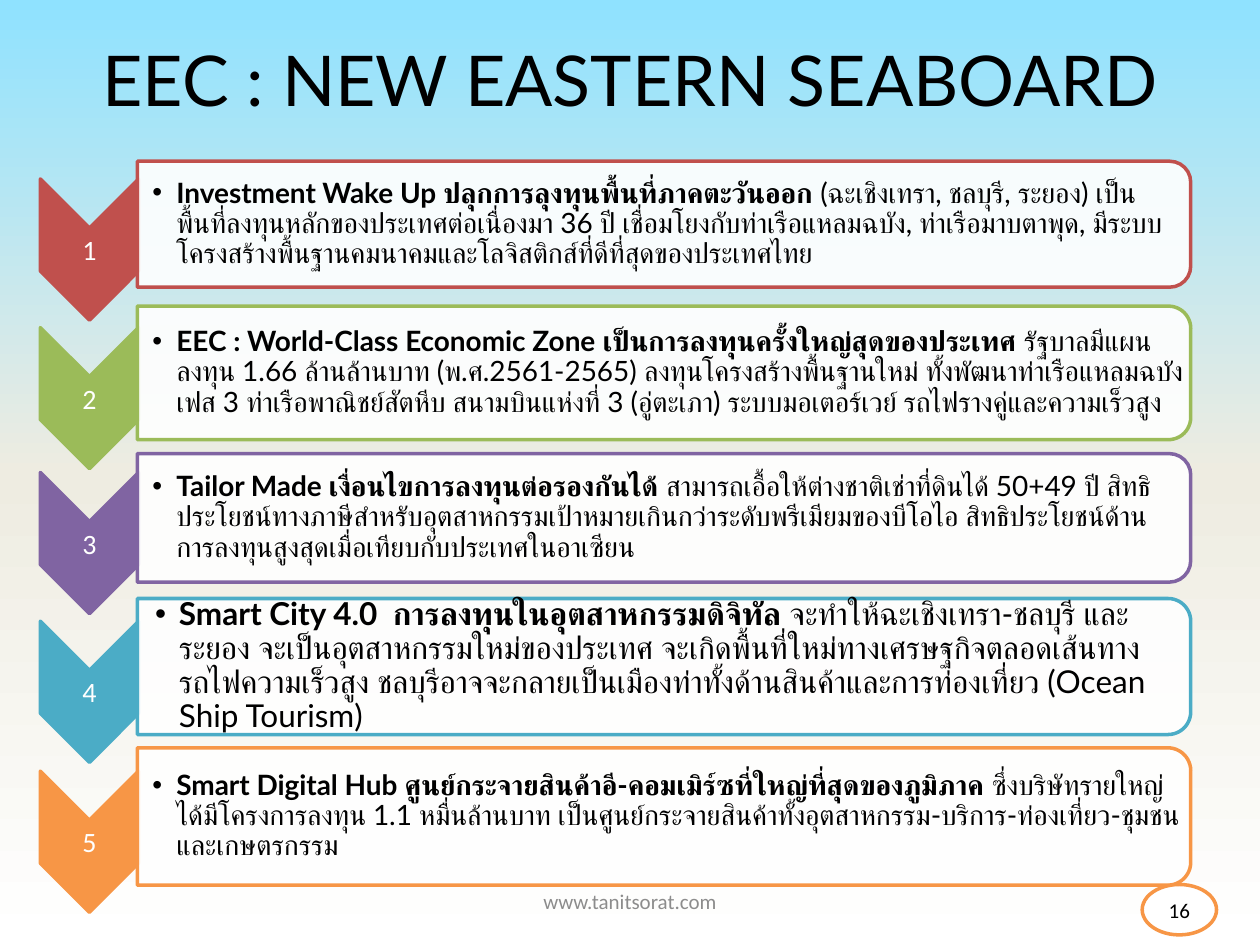
import pptx
import pptx.util
import pptx.dml.color
import pptx.enum.shapes
import pptx.enum.text
import pptx.oxml.ns
from lxml import etree

HUE = {"red": "C0504D", "green": "9BBB59", "violet": "8064A2", "teal": "4BACC6",
       "orange": "F79646", "white": "FFFFFF", "black": "000000", "gray": "8C8C8C",
       "sky": "8FE2FF", "sand": "EEECE1"}
TITLE = "EEC : NEW EASTERN SEABOARD"
SITE = "www.tanitsorat.com"
PAGE = "16"
FADE = [(0, "sky"), (50, "sand"), (100, "white")]
ROWS = [
    ("red", 1.78, 1.0, 16, "Investment Wake Up ปลุกการลุงทุนพื้นที่ภาคตะวันออก ",
     "(ฉะเชิงเทรา, ชลบุรี, ระยอง) เป็นพื้นที่ลงทุนหลักของประเทศต่อเนื่องมา 36 ปี เชื่อมโยงกับท่าเรือแหลมฉบัง, ท่าเรือมาบตาพุด, มีระบบโครงสร้างพื้นฐานคมนาคมและโลจิสติกส์ที่ดีที่สุดของประเทศไทย"),
    ("green", 2.96, 1.06, 16, "EEC : World-Class Economic Zone เป็นการลงทุนครั้งใหญ่สุดของประเทศ ",
     "รัฐบาลมีแผนลงทุน 1.66 ล้านล้านบาท (พ.ศ.2561-2565) ลงทุนโครงสร้างพื้นฐานใหม่ ทั้งพัฒนาท่าเรือแหลมฉบังเฟส 3 ท่าเรือพาณิชย์สัตหีบ สนามบินแห่งที่ 3 (อู่ตะเภา) ระบบมอเตอร์เวย์ รถไฟรางคู่และความเร็วสูง"),
    ("violet", 4.11, 1.02, 16, "Tailor Made เงื่อนไขการลงทุนต่อรองกันได้ ",
     "สามารถเอื้อให้ต่างชาติเช่าที่ดินได้ 50+49 ปี สิทธิประโยชน์ทางภาษีสำหรับอุตสาหกรรมเป้าหมายเกินกว่าระดับพรีเมียมของบีโอไอ สิทธิประโยชน์ด้านการลงทุนสูงสุดเมื่อเทียบกับประเทศในอาเซียน"),
    ("teal", 5.29, 1.08, 18, "Smart City 4.0  การลงทุนในอุตสาหกรรมดิจิทัล ",
     "จะทำให้ฉะเชิงเทรา-ชลบุรี และระยอง จะเป็นอุตสาหกรรมใหม่ของประเทศ จะเกิดพื้นที่ใหม่ทางเศรษฐกิจตลอดเส้นทางรถไฟความเร็วสูง ชลบุรีอาจจะกลายเป็นเมืองท่าทั้งด้านสินค้าและการท่องเที่ยว (Ocean Ship Tourism)"),
    ("orange", 6.48, 1.09, 16, "Smart Digital Hub ศูนย์กระจายสินค้าอี-คอมเมิร์ซที่ใหญ่ที่สุดของภูมิภาค ",
     "ซึ่งบริษัทรายใหญ่ ได้มีโครงการลงทุน 1.1 หมื่นล้านบาท เป็นศูนย์กระจายสินค้าทั้งอุตสาหกรรม-บริการ-ท่องเที่ยว-ชุมชน และเกษตรกรรม"),
]
LEFT, WIDE, DROP, CHEV = 1.09, 8.36, 0.2, (0.71, 1.12, 0.78)

inch = pptx.util.Inches
kind = pptx.enum.shapes.MSO_SHAPE
align = pptx.enum.text.PP_ALIGN
qn = pptx.oxml.ns.qn


def rgb(name):
    return pptx.dml.color.RGBColor.from_string(HUE[name])


def frame(mid_x, mid_y, wide, high):
    return [inch(v) for v in (mid_x - wide / 2, mid_y - high / 2, wide, high)]


def style(run, size, hue, face="Calibri", bold=False):
    font = run.font
    font.size, font.name, font.bold = pptx.util.Pt(size), face, bold
    font.color.rgb = rgb(hue)


def form(slide, geom, box, fill, line, turn=0):
    shape = slide.shapes.add_shape(geom, *box)
    shape.rotation = turn
    shape.shadow.inherit = False
    shape.fill.solid()
    shape.fill.fore_color.rgb = rgb(fill)
    shape.line.color.rgb = rgb(line)
    shape.line.width = pptx.util.Pt(2)
    return shape


def setup(text, inset):
    text.word_wrap = True
    text.vertical_anchor = pptx.enum.text.MSO_ANCHOR.MIDDLE
    text.margin_left = inch(inset)
    text.margin_top = text.margin_right = text.margin_bottom = inch(0.01)
    return text.paragraphs[0]


def label(shape, words, size, hue):
    para = setup(shape.text_frame, 0.01)
    para.text = words
    para.alignment = align.CENTER
    style(para.runs[0], size, hue)


def text_box(slide, box):
    return slide.shapes.add_textbox(*box)


def bullet(para):
    props = para._p.get_or_add_pPr()
    props.set("marL", str(inch(0.19)))
    props.set("indent", str(-inch(0.19)))
    etree.SubElement(props, qn("a:buFont")).set("typeface", "Arial")
    etree.SubElement(props, qn("a:buChar")).set("char", "•")


def backdrop(slide):
    fill = slide.background.fill
    fill.gradient()
    fill.gradient_angle = 270
    stops = slide._element.find(".//" + qn("a:gsLst"))
    for old in list(stops):
        stops.remove(old)
    for place, hue in FADE:
        stop = etree.SubElement(stops, qn("a:gs"))
        stop.set("pos", str(place * 1000))
        etree.SubElement(stop, qn("a:srgbClr")).set("val", HUE[hue])


def row(slide, num, hue, mid, high, size, head, body):
    chev_x, long, broad = CHEV
    form(slide, kind.CHEVRON, frame(chev_x, mid + DROP, long, broad), hue, hue, 90)
    label(text_box(slide, frame(chev_x, mid + DROP, broad, 0.33)), str(num), 16, "white")

    bar = form(slide, kind.ROUND_2_SAME_RECTANGLE,
               frame(LEFT + WIDE / 2, mid, high, WIDE), "white", hue, 90)
    tone = bar._element.spPr.find(qn("a:solidFill"))[0]
    etree.SubElement(tone, qn("a:alpha")).set("val", "90000")

    wide = WIDE - 0.05
    box = text_box(slide, frame(LEFT + wide / 2, mid, wide, high - 0.1))
    para = setup(box.text_frame, 0.14 if size > 16 else 0.12)
    bullet(para)
    para.line_spacing = 0.9
    for words, bold in ((head, True), (body, False)):
        run = para.add_run()
        run.text = words
        style(run, size, "black", "Lato", bold)


def main():
    deck = pptx.Presentation()
    deck.slide_width, deck.slide_height = inch(10), inch(7.5)
    slide = deck.slides.add_slide(deck.slide_layouts[5])
    backdrop(slide)

    title = slide.shapes.title
    title.left, title.top, title.width, title.height = frame(5, 0.625, 9, 1.25)
    title.text_frame.text = TITLE
    title.text_frame.vertical_anchor = pptx.enum.text.MSO_ANCHOR.MIDDLE
    para = title.text_frame.paragraphs[0]
    para.alignment = align.CENTER
    style(para.runs[0], 40, "black", "Lato")

    label(text_box(slide, frame(5, 7.15, 3.17, 0.4)), SITE, 12, "gray")
    for num, item in enumerate(ROWS, 1):
        row(slide, num, *item)
    oval = form(slide, kind.OVAL, frame(9.36, 7.22, 0.59, 0.4), "white", "orange")
    label(oval, PAGE, 12, "black")
    deck.save("out.pptx")


if __name__ == "__main__":
    main()
